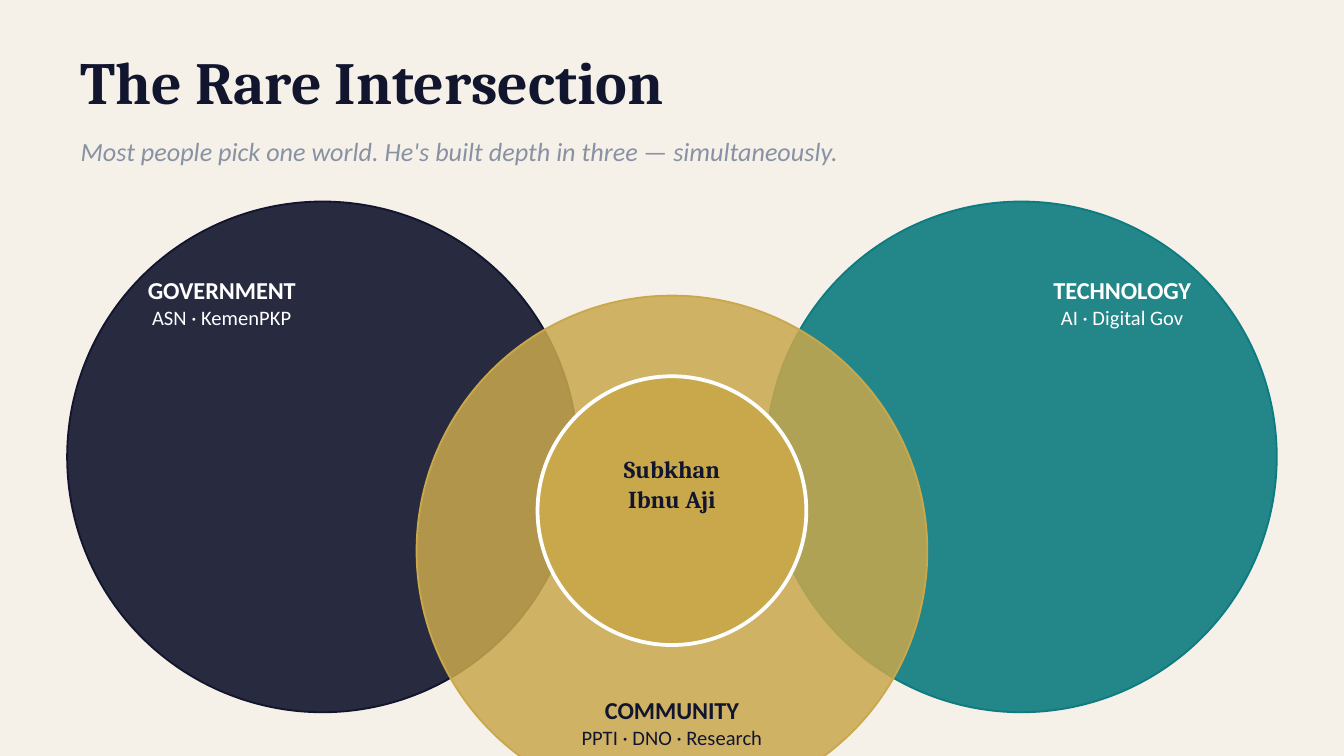
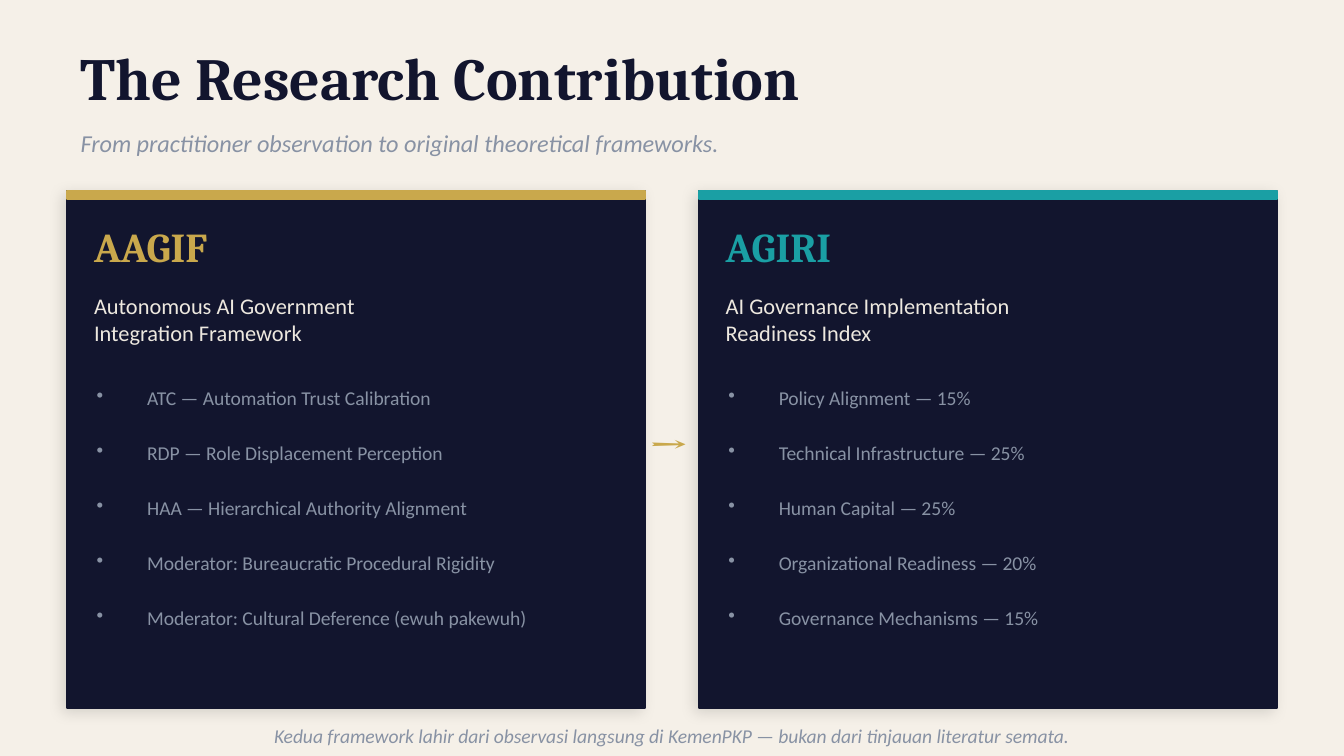
import lxml.etree
import pptx
import pptx.dml.color
import pptx.enum.shapes
import pptx.enum.text
import pptx.oxml.ns
import pptx.util

Inches = pptx.util.Inches
Pt = pptx.util.Pt
qn = pptx.oxml.ns.qn
SHAPES = pptx.enum.shapes.MSO_SHAPE
ALIGN = pptx.enum.text.PP_ALIGN

CREAM, NAVY, GOLD, WHITE = "F5F0E8", "12152E", "C9A84C", "FFFFFF"
TEAL, BRIGHT_TEAL, GREY, IVORY = "0D7B7F", "1A9FA4", "8892A4", "EDE8DF"
SERIF, SANS = "Cambria", "Calibri"
BULLET_INDENT = Pt(27)


def rgb(value):
    return pptx.dml.color.RGBColor.from_string(value)


def add_xml(parent, tag, **attributes):
    child = lxml.etree.SubElement(parent, qn(tag))
    for key, value in attributes.items():
        child.set(key, str(value))
    return child


class Deck:
    """Holds the shared style and the slide being built."""

    def __init__(self):
        self.presentation = pptx.Presentation()
        self.presentation.slide_width = Inches(10)
        self.presentation.slide_height = Inches(10) * 9 // 16
        self.slide = None

    def new_slide(self):
        self.slide = self.presentation.slides.add_slide(self.presentation.slide_layouts[6])
        fill = self.slide.background.fill
        fill.solid()
        fill.fore_color.rgb = rgb(CREAM)

    def heading(self, title, title_box, subtitle, subtitle_box, subtitle_size):
        self.text(title, title_box, 32, NAVY, font=SERIF, bold=True)
        self.text(subtitle, subtitle_box, subtitle_size, GREY, italic=True)

    def text(self, content, box, size, color, font=SANS, bold=False, italic=False,
             centered=False):
        frame = self.slide.shapes.add_textbox(*map(Inches, box)).text_frame
        frame.word_wrap = True
        frame.margin_left = frame.margin_right = frame.margin_top = frame.margin_bottom = 0
        frame.vertical_anchor = pptx.enum.text.MSO_ANCHOR.MIDDLE
        frame.text = content
        for paragraph in frame.paragraphs:
            paragraph.alignment = ALIGN.CENTER if centered else ALIGN.LEFT
            for run in paragraph.runs:
                run.font.name = font
                run.font.size = Pt(size)
                run.font.bold = bold
                run.font.italic = italic
                run.font.color.rgb = rgb(color)
        return frame

    def label(self, content, box, color):
        frame = self.text(content, box, 13, color, centered=True)
        world, detail = frame.paragraphs
        world.runs[0].font.bold = True
        detail.runs[0].font.size = Pt(11)

    def bullet(self, content, box):
        paragraph = self.text(content, box, 10.5, GREY).paragraphs[0]
        properties = paragraph._p.get_or_add_pPr()
        properties.set("marL", str(BULLET_INDENT))
        properties.set("indent", str(-BULLET_INDENT))
        add_xml(properties, "a:buSzPct", val=100000)
        add_xml(properties, "a:buChar", char="•")

    def shape(self, kind, box, color, outline=None, width=1, opacity=100, shadow=False):
        shape = self.slide.shapes.add_shape(kind, *map(Inches, box))
        shape.shadow.inherit = False
        shape.fill.solid()
        shape.fill.fore_color.rgb = rgb(color)
        shape.line.color.rgb = rgb(outline or color)
        shape.line.width = Pt(width)
        properties = shape._element.spPr
        if opacity < 100:
            fill_color = properties.find(qn("a:solidFill")).find(qn("a:srgbClr"))
            add_xml(fill_color, "a:alpha", val=opacity * 1000)
        if shadow:
            outer = add_xml(properties.find(qn("a:effectLst")), "a:outerShdw",
                            blurRad=Pt(8), dist=Pt(3), dir=135 * 60000,
                            algn="bl", rotWithShape=0)
            add_xml(add_xml(outer, "a:srgbClr", val="000000"), "a:alpha", val=12000)

    def circle(self, left, top, diameter, color, **style):
        self.shape(SHAPES.OVAL, (left, top, diameter, diameter), color, **style)

    def framework_card(self, left, accent, acronym, meaning, points):
        self.shape(SHAPES.RECTANGLE, (left, 1.42, 4.3, 3.85), NAVY, shadow=True)
        self.shape(SHAPES.RECTANGLE, (left, 1.42, 4.3, 0.06), accent)
        self.text(acronym, (left + 0.2, 1.58, 3.9, 0.5), 22, accent, font=SERIF, bold=True)
        self.text(meaning, (left + 0.2, 2.1, 3.9, 0.55), 12, IVORY)
        for row, point in enumerate(points):
            self.bullet(point, (left + 0.22, 2.78 + 0.41 * row, 3.9, 0.36))


def build_intersection(deck):
    deck.new_slide()
    deck.heading("The Rare Intersection", (0.6, 0.3, 8.8, 0.6),
                 "Most people pick one world. He's built depth in three — simultaneously.",
                 (0.6, 0.95, 8.8, 0.35), 14)
    for left, top, color, opacity in [(0.5, 1.5, NAVY, 90), (5.7, 1.5, TEAL, 90),
                                      (3.1, 2.2, GOLD, 85)]:
        deck.circle(left, top, 3.8, color, opacity=opacity)
    deck.label("GOVERNMENT\nASN · KemenPKP", (0.55, 1.85, 2.2, 0.8), WHITE)
    deck.label("TECHNOLOGY\nAI · Digital Gov", (7.25, 1.85, 2.2, 0.8), WHITE)
    deck.label("COMMUNITY\nPPTI · DNO · Research", (3.8, 5, 2.4, 0.75), NAVY)
    deck.circle(4, 2.8, 2, GOLD, outline=WHITE, width=2)
    deck.text("Subkhan\nIbnu Aji", (4, 3.05, 2, 1.1), 13, NAVY, font=SERIF, bold=True,
              centered=True)


def build_contribution(deck):
    deck.new_slide()
    deck.heading("The Research Contribution", (0.6, 0.28, 8.8, 0.58),
                 "From practitioner observation to original theoretical frameworks.",
                 (0.6, 0.9, 8.8, 0.32), 13)
    deck.framework_card(0.5, GOLD, "AAGIF",
                        "Autonomous AI Government\nIntegration Framework",
                        ["ATC — Automation Trust Calibration",
                         "RDP — Role Displacement Perception",
                         "HAA — Hierarchical Authority Alignment",
                         "Moderator: Bureaucratic Procedural Rigidity",
                         "Moderator: Cultural Deference (ewuh pakewuh)"])
    deck.framework_card(5.2, BRIGHT_TEAL, "AGIRI",
                        "AI Governance Implementation\nReadiness Index",
                        ["Policy Alignment — 15%",
                         "Technical Infrastructure — 25%",
                         "Human Capital — 25%",
                         "Organizational Readiness — 20%",
                         "Governance Mechanisms — 15%"])
    deck.text("→", (4.65, 3, 0.65, 0.6), 28, GOLD, font=SERIF, bold=True, centered=True)
    deck.text("Kedua framework lahir dari observasi langsung di KemenPKP — "
              "bukan dari tinjauan literatur semata.",
              (0.5, 5.35, 9, 0.25), 10.5, GREY, italic=True, centered=True)


def main():
    deck = Deck()
    build_intersection(deck)
    build_contribution(deck)
    deck.presentation.save("out.pptx")


if __name__ == "__main__":
    main()
